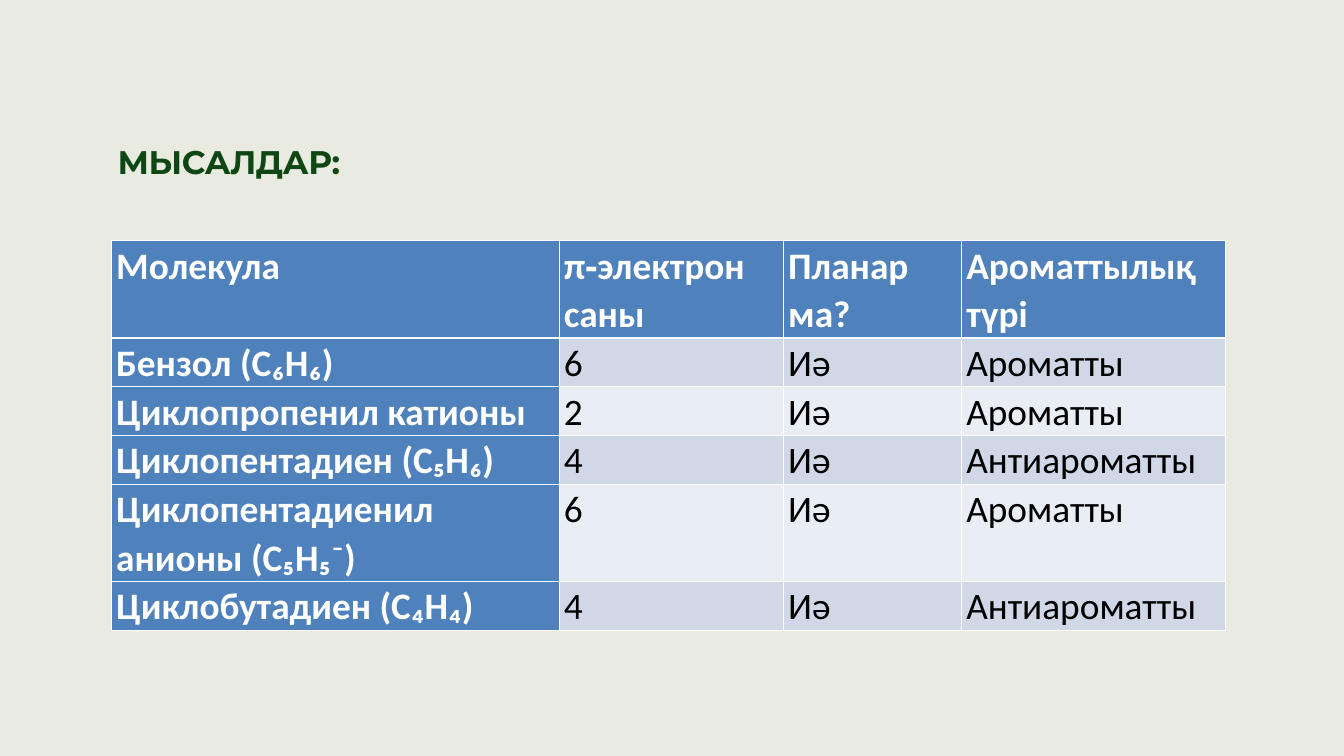
from lxml import etree
from pptx import Presentation
from pptx.dml.color import RGBColor
from pptx.enum import text as t
from pptx.oxml import ns
from pptx.util import Inches, Pt

# Content
TITLE = "МЫСАЛДАР:"
ROWS = [
    ("Молекула", "π‑электрон саны", "Планар ма?", "Ароматтылық түрі"),
    ("Бензол (C₆H₆)", "6", "Иә", "Ароматты"),
    ("Циклопропенил катионы", "2", "Иә", "Ароматты"),
    ("Циклопентадиен (C₅H₆)", "4", "Иә", "Антиароматты"),
    ("Циклопентадиенил анионы (C₅H₅⁻)", "6", "Иә", "Ароматты"),
    ("Циклобутадиен (C₄H₄)", "4", "Иә", "Антиароматты"),
]
COLS = [6.66, 3.34, 2.65, 3.93]
LINES = [2, 1, 1, 1, 2, 1]  # text lines in each row
LINE = 0.71

# Formats
BLUE, WHITE, BLACK = "4F81BD", "FFFFFF", "000000"
BANDS = ["E9EDF4", "D0D8E8"]
HEAD = {"name": "Montserrat", "size": Pt(35), "bold": True}
BODY = {"name": "Calibri", "size": Pt(40)}
FRAME = {"margin_left": 0, "margin_right": 0, "margin_top": 0,
         "margin_bottom": 0, "word_wrap": True,
         "auto_size": t.MSO_AUTO_SIZE.NONE,
         "vertical_anchor": t.MSO_ANCHOR.TOP}
CELL = {"margin_left": Inches(0.07), "margin_right": Inches(0.07),
        "margin_top": 0, "margin_bottom": 0,
        "vertical_anchor": t.MSO_ANCHOR.TOP}


def rgb(code):
    return RGBColor.from_string(code)


def apply(obj, form):
    for key, val in form.items():
        setattr(obj, key, val)


def write(frame, words, form, color, gap):
    """Put one paragraph in the frame and return its run."""
    para = frame.paragraphs[0]
    apply(para, {"alignment": t.PP_ALIGN.LEFT, "line_spacing": gap,
                 "space_before": Pt(0), "space_after": Pt(0)})
    run = para.add_run()
    run.text = words
    apply(run.font, form)
    run.font.color.rgb = rgb(color)
    return run


def border(cell, widths):
    """Draw white lines; widths are left, right, top, bottom in points."""
    props = cell._tc.get_or_add_tcPr()
    for i, (side, width) in enumerate(zip("LRTB", widths)):
        line = etree.Element(ns.qn("a:ln" + side), w=str(Pt(width)))
        fill = etree.SubElement(line, ns.qn("a:solidFill"))
        etree.SubElement(fill, ns.qn("a:srgbClr"), val=WHITE)
        props.insert(i, line)


def main():
    prs = Presentation()
    prs.slide_width, prs.slide_height = Inches(20), Inches(11.25)
    slide = prs.slides.add_slide(prs.slide_layouts[5])
    slide.background.fill.solid()
    slide.background.fill.fore_color.rgb = rgb("E9EAE0")

    # Title
    title = slide.shapes.title
    apply(title, {"left": Inches(1.75), "top": Inches(1.96),
                  "width": Inches(18.52), "height": Inches(0.7)})
    apply(title.text_frame, FRAME)
    run = write(title.text_frame, TITLE, HEAD, "0E4714", Pt(52.5))
    run.font._element.set("spc", "-50")

    # Table
    table = slide.shapes.add_table(
        len(ROWS), len(COLS), Inches(1.66), Inches(3.58),
        Inches(sum(COLS)), Inches(LINE * sum(LINES))).table
    table.first_col = True
    for col, width in zip(table.columns, COLS):
        col.width = Inches(width)
    for r, (row, count) in enumerate(zip(ROWS, LINES)):
        table.rows[r].height = Inches(LINE * count)
        for c, words in enumerate(row):
            cell = table.cell(r, c)
            key = r == 0 or c == 0  # header row or first column
            apply(cell, CELL)
            cell.fill.solid()
            cell.fill.fore_color.rgb = rgb(BLUE if key else BANDS[r % 2])
            border(cell, (1, 1, 3 if r == 1 else 1, 3 if r == 0 else 1))
            write(cell.text_frame, words, {**BODY, "bold": key},
                  WHITE if key else BLACK, 1.07)

    prs.save("out.pptx")


if __name__ == "__main__":
    main()
